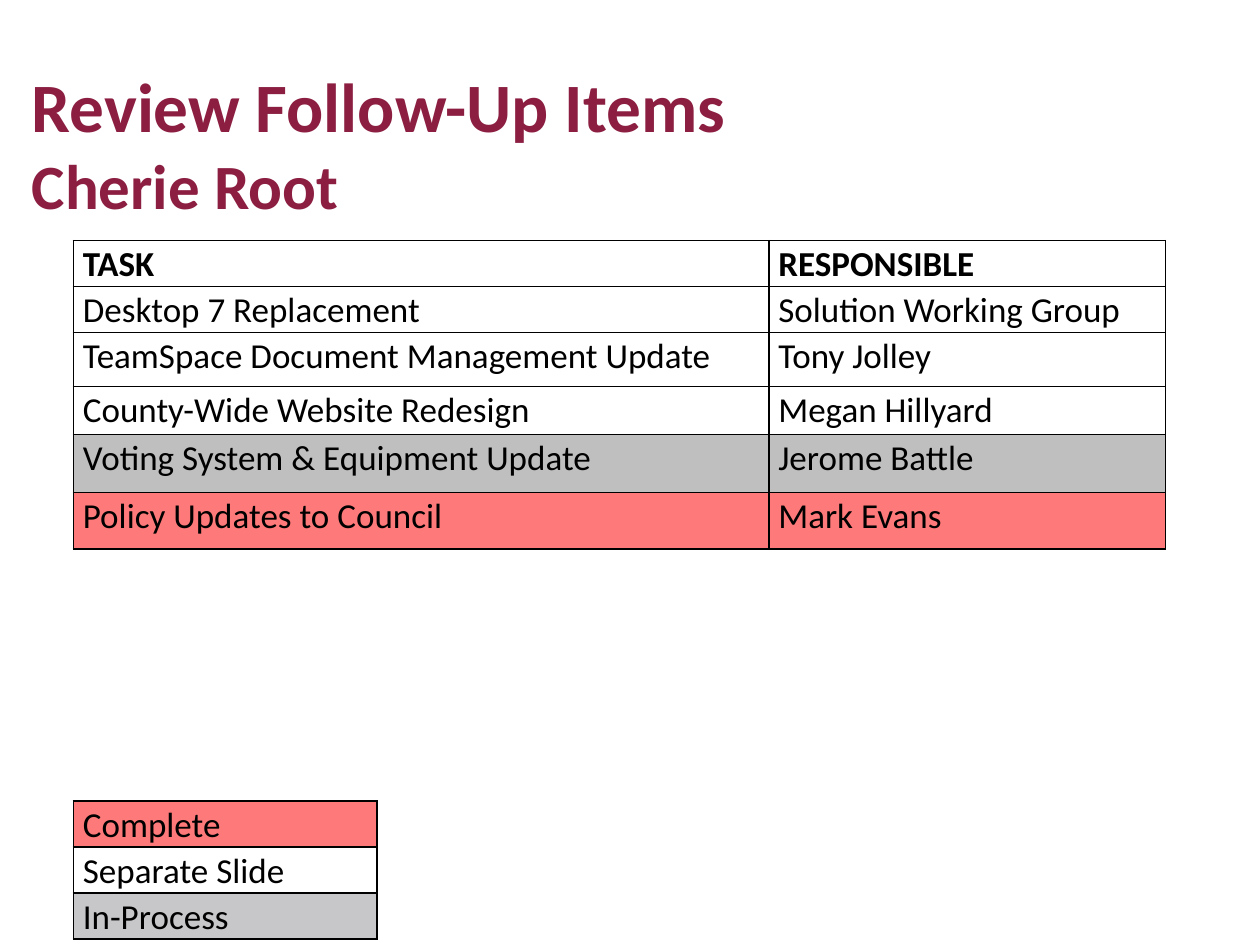
from lxml.etree import SubElement
from pptx import Presentation
from pptx.dml.color import RGBColor as RGB
from pptx.enum.text import MSO_ANCHOR as Anchor, MSO_AUTO_SIZE as Fit, PP_ALIGN as Align
from pptx.oxml.ns import qn
from pptx.util import Cm, Pt

HUES = {"title": "8B1E41", "ink": "000000", "plain": "FFFFFF",
        "grey": "BFBFBF", "done": "FE7979", "open": "C7C7CA"}


def style(font, size, hue, bold):
    looks = {"name": "Calibri", "size": Pt(size), "bold": bold}
    for key, val in looks.items():
        setattr(font, key, val)
    font.color.rgb = RGB.from_string(HUES[hue])


def grid(slide, left, top, widths, rows, head):
    frame = slide.shapes.add_table(len(rows), len(widths), Cm(left), Cm(top),
                                   Cm(sum(widths)), Cm(sum(r[0] for r in rows)))
    table = frame.table
    table.first_row = head
    table.horz_banding = False
    for col, width in zip(table.columns, widths):
        col.width = Cm(width)
    pads = {"margin_left": Cm(0.19), "margin_right": Cm(0.19), "margin_top": 0,
            "margin_bottom": 0, "vertical_anchor": Anchor.TOP}
    for y, (height, hue, *words) in enumerate(rows):
        table.rows[y].height = Cm(height)
        for x, word in enumerate(words):
            cell = table.cell(y, x)
            for key, val in pads.items():
                setattr(cell, key, val)
            para = cell.text_frame.paragraphs[0]
            para.line_spacing = 1.07
            run = para.add_run()
            run.text = word
            style(run.font, 20, "ink", head and y == 0)
            props = cell._tc.get_or_add_tcPr()
            for side in ("lnL", "lnR", "lnT", "lnB"):
                line = SubElement(props, qn("a:" + side), w=str(Pt(1)))
                fill = SubElement(line, qn("a:solidFill"))
                SubElement(fill, qn("a:srgbClr"), val=HUES["ink"])
            cell.fill.solid()
            cell.fill.fore_color.rgb = RGB.from_string(HUES[hue])


deck = Presentation()
deck.slide_width, deck.slide_height = Cm(25.4), Cm(19.05)
slide = deck.slides.add_slide(deck.slide_layouts[5])

title = slide.shapes.title
place = {"left": 0.64, "top": 1.27, "width": 22.86, "height": 1.9}
for key, val in place.items():
    setattr(title, key, Cm(val))
frame = title.text_frame
looks = {"margin_left": 0, "margin_right": 0, "margin_top": 0, "margin_bottom": 0,
         "word_wrap": True, "auto_size": Fit.NONE, "vertical_anchor": Anchor.TOP}
for key, val in looks.items():
    setattr(frame, key, val)
para = frame.paragraphs[0]
para.alignment = Align.LEFT
for word, size in (("Review Follow-Up Items", 39.6), ("Cherie Root", 36)):
    if para.runs:
        para.add_line_break()
    run = para.add_run()
    run.text = word
    style(run.font, size, "title", True)

tasks = [
    (0.86, "plain", "TASK", "RESPONSIBLE"),
    (0.86, "plain", "Desktop 7 Replacement", "Solution Working Group"),
    (1.09, "plain", "TeamSpace Document Management Update", "Tony Jolley"),
    (0.97, "plain", "County-Wide Website Redesign", "Megan Hillyard"),
    (1.17, "grey", "Voting System & Equipment Update", "Jerome Battle"),
    (1.14, "done", "Policy Updates to Council", "Mark Evans"),
]
grid(slide, 1.48, 4.85, [14.02, 8], tasks, True)

keys = [(0.79, "done", "Complete"), (0.79, "plain", "Separate Slide"),
        (0.79, "open", "In-Process")]
grid(slide, 1.48, 16.15, [6.12], keys, False)

deck.save("out.pptx")
